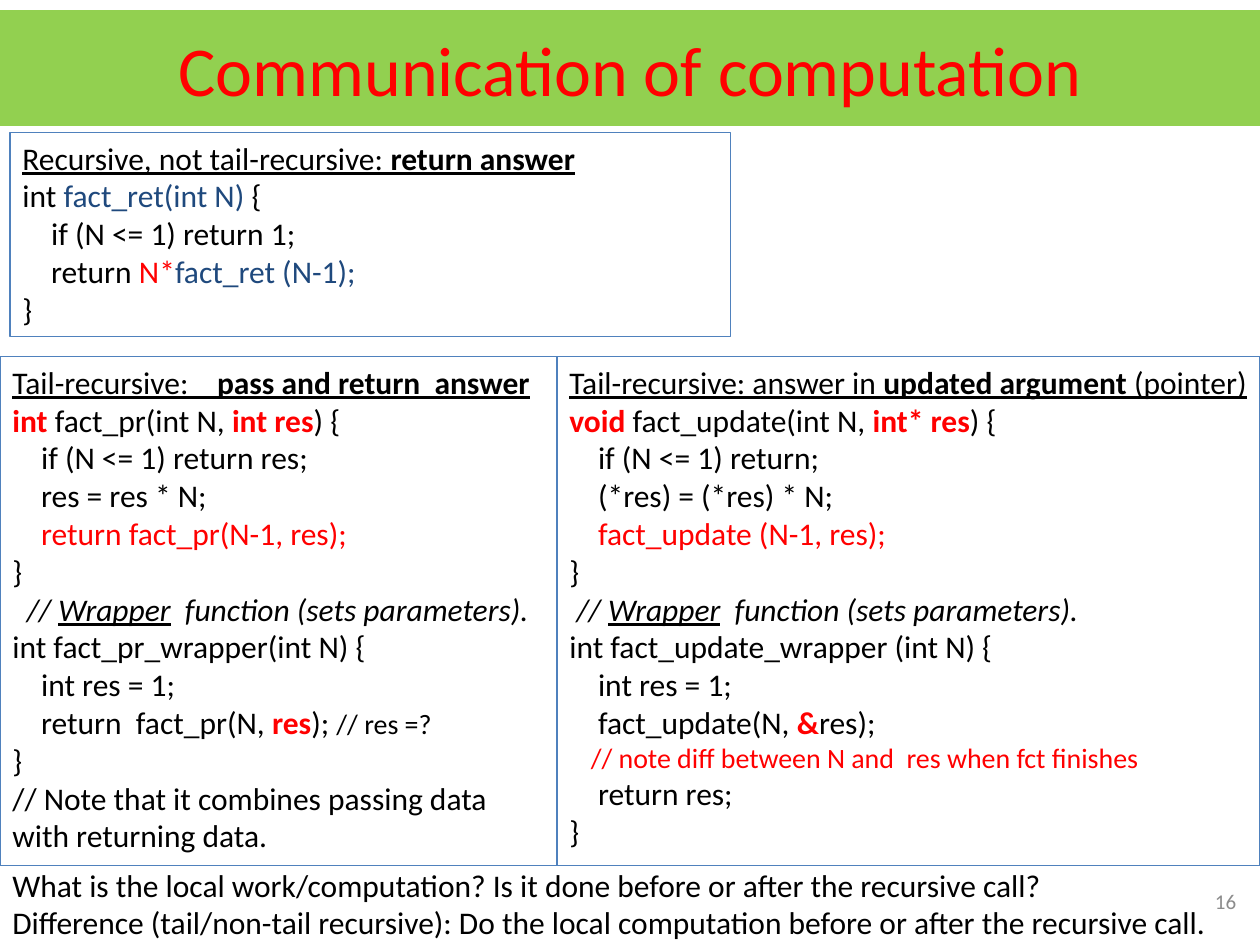
from pptx import Presentation
from pptx.dml.color import RGBColor
from pptx.enum.shapes import MSO_SHAPE
from pptx.enum.text import MSO_ANCHOR, MSO_AUTO_SIZE, PP_ALIGN
from pptx.util import Inches, Pt

RED, NAVY, BLACK = "FF0000", "1F497D", "000000"
SPACE = 0.057  # width of one 18 pt space, in inches

STYLES = {
    "": {},
    "red": {"color": RED},
    "navy": {"color": NAVY},
    "key": {"color": RED, "bold": True},
    "head": {"underline": True},
    "headbold": {"underline": True, "bold": True},
    "note": {"italic": True},
    "notemark": {"italic": True, "underline": True},
    "small": {"size": Pt(16)},
    "smallred": {"size": Pt(16), "color": RED},
    "title": {"size": Pt(40), "color": RED},
    "number": {"size": Pt(12), "color": "8C8C8C"},
}


def rgb(value):
    return RGBColor.from_string(value)


def write(sp, lines, align=PP_ALIGN.LEFT, anchor=MSO_ANCHOR.TOP, wrap=True,
          fit=MSO_AUTO_SIZE.SHAPE_TO_FIT_TEXT):
    """Fill a shape from lines of (indent in spaces, (text, style), ...)."""
    tf = sp.text_frame
    for name, value in {"word_wrap": wrap, "auto_size": fit,
                        "vertical_anchor": anchor}.items():
        setattr(tf, name, value)
    for i, (indent, *runs) in enumerate(lines):
        p = tf.paragraphs[0] if i == 0 else tf.add_paragraph()
        p.alignment = align
        if indent:
            p._p.get_or_add_pPr().set("marL", str(Inches(indent * SPACE)))
        for text, style in runs:
            r = p.add_run()
            r.text = text
            font = {"name": "Calibri", "size": Pt(18), "color": BLACK, **STYLES[style]}
            r.font.color.rgb = rgb(font.pop("color"))
            for name, value in font.items():
                setattr(r.font, name, value)


wrapper_note = [("// ", "note"), ("Wrapper", "notemark"),
                ("  function (sets parameters).", "note")]

return_answer = [
    (0, ("Recursive, not tail-recursive: ", "head"), ("return answer", "headbold")),
    (0, ("int ", ""), ("fact_ret(int N) ", "navy"), ("{", "")),
    (4, ("if (N <= 1) return 1;", "")),
    (4, ("return ", ""), ("N*", "red"), ("fact_ret (N-1);", "navy")),
    (0, ("}", "")),
]
updated_argument = [
    (0, ("Tail-recursive: answer in ", "head"), ("updated argument", "headbold"),
     (" (pointer)", "head")),
    (0, ("void ", "key"), ("fact_update(int N, ", ""), ("int* res", "key"), (") {", "")),
    (4, ("if (N <= 1) return;", "")),
    (4, ("(*res) = (*res) * N;", "")),
    (4, ("fact_update (N-1, res);", "red")),
    (0, ("}", "")),
    (1, *wrapper_note),
    (0, ("int fact_update_wrapper (int N) {", "")),
    (4, ("int res = 1;", "")),
    (4, ("fact_update(N, ", ""), ("&", "key"), ("res);", "")),
    (3, ("// note diff between N and  res when fct finishes", "smallred")),
    (4, ("return res;", "")),
    (0, ("}", "")),
]
pass_and_return = [
    (0, ("Tail-recursive:    ", "head"), ("pass and return  answer", "headbold")),
    (0, ("int ", "key"), ("fact_pr(int N, ", ""), ("int res", "key"), (") {", "")),
    (4, ("if (N <= 1) return res;", "")),
    (4, ("res = res * N;", "")),
    (4, ("return fact_pr(N-1, res);", "red")),
    (0, ("}", "")),
    (2, *wrapper_note),
    (0, ("int fact_pr_wrapper(int N) {", "")),
    (4, ("int res = 1;", "")),
    (4, ("return  fact_pr(N, ", ""), ("res", "key"), ("); ", ""), ("// res =?", "small")),
    (0, ("}", "")),
    (0, ("// Note that it combines passing data with returning data.", "")),
]
questions = [
    (0, ("What is the local work/computation? "
         "Is it done before or after the recursive call?", "")),
    (0, ("Difference (tail/non-tail recursive): "
         "Do the local computation before or after the recursive call.", "")),
]

prs = Presentation()
prs.slide_width, prs.slide_height = Inches(10), Inches(7.5)
s = prs.slides.add_slide(prs.slide_layouts[6])

number = s.shapes.add_textbox(Inches(7.58), Inches(6.95), Inches(2.33), Inches(0.4))
write(number, [(0, ("16", "number"))], PP_ALIGN.RIGHT, MSO_ANCHOR.MIDDLE,
      fit=MSO_AUTO_SIZE.NONE)

code_boxes = [
    ((0.08, 1.05, 5.72, 1.62), return_answer),
    ((4.42, 2.83, 5.58, 4.04), updated_argument),
    ((0, 2.83, 4.42, 4.04), pass_and_return),
]
for place, lines in code_boxes:
    sp = s.shapes.add_shape(MSO_SHAPE.RECTANGLE, *map(Inches, place))
    sp.shadow.inherit = False
    sp.fill.background()
    sp.line.color.rgb = rgb("4F81BD")
    sp.line.width = Pt(0.75)
    write(sp, lines)

title = s.shapes.add_shape(MSO_SHAPE.RECTANGLE, 0, Inches(0.08), Inches(10), Inches(0.92))
title.shadow.inherit = False
title.fill.solid()
title.fill.fore_color.rgb = rgb("92D050")
title.line.fill.background()
write(title, [(0, ("Communication of computation", "title"))], PP_ALIGN.CENTER,
      MSO_ANCHOR.MIDDLE, fit=MSO_AUTO_SIZE.NONE)

footer = s.shapes.add_textbox(0, Inches(6.82), Inches(9.8), Inches(0.71))
write(footer, questions, wrap=False)

prs.save("out.pptx")
